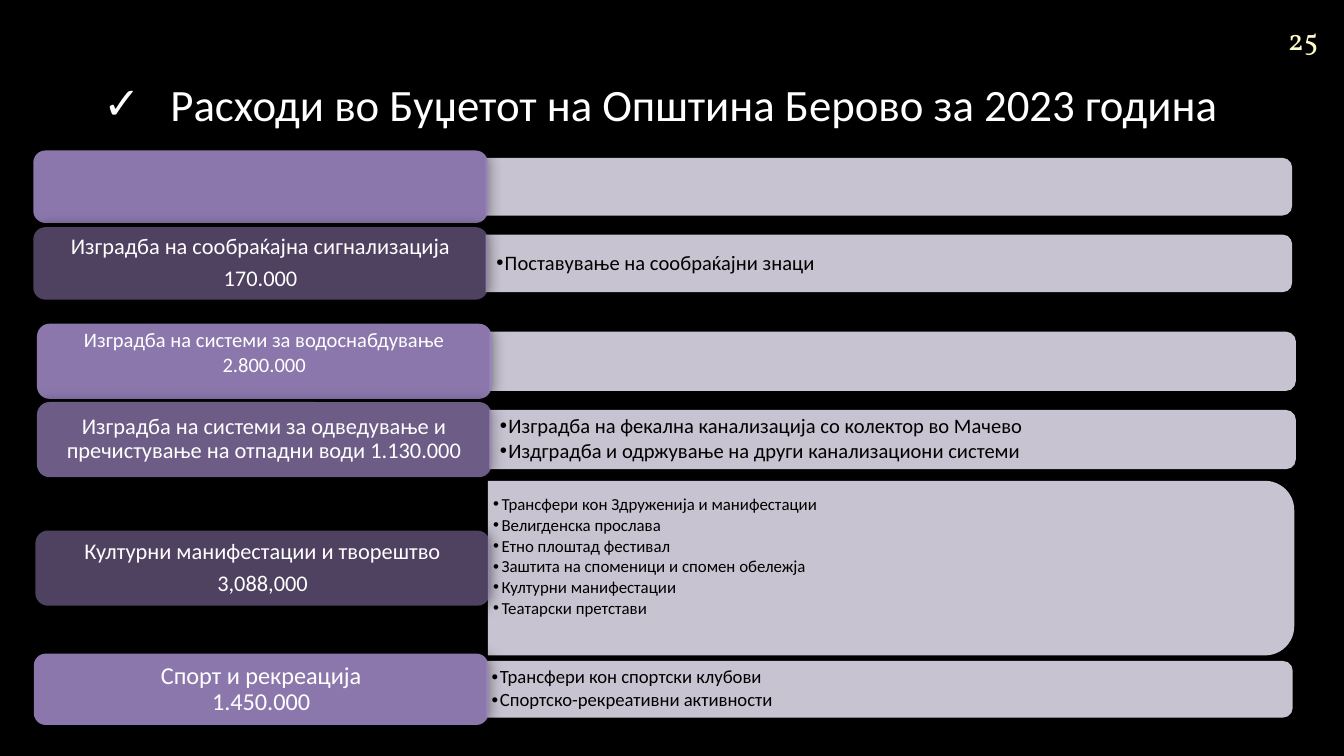
from lxml import etree
from pptx import Presentation
from pptx.dml.color import RGBColor
from pptx.enum import shapes, text
from pptx.oxml.ns import qn
from pptx.util import Cm, Pt

BLACK = RGBColor(0x00, 0x00, 0x00)
WHITE = RGBColor(0xFF, 0xFF, 0xFF)
CREAM = RGBColor(0xFE, 0xFA, 0xC9)
PURPLE = RGBColor(0x9C, 0x85, 0xC0)
LILAC = RGBColor(0xDE, 0xD9, 0xE8)

PANEL_WIDTH = 15.24
LABEL_WIDTH = 8.59
LABEL_OFFSET = 8.55  # a label starts this far left of its panel

# panel left, centre y, panel height, label height, label opacity %,
# label size, label lines, extra space under label,
# bullet size, bullet inset, bullets, extra space under bullets
ROWS = [
    (9.18, 3.53, 1.09, 1.37, 90, 12, [], 0, 11, 0.2, [], 0),
    (9.18, 4.98, 1.09, 1.37, 50, 12,
     ["Изградба на сообраќајна сигнализација", "170.000"], 0,
     11, 0.2, ["Поставување на сообраќајни знаци"], 0),
    (9.25, 6.83, 1.12, 1.42, 90, 11,
     ["Изградба на системи за водоснабдување 2.800.000"], 0.36, 11, 0.2, [], 0),
    (9.25, 8.31, 1.12, 1.42, 70, 12,
     ["Изградба на системи за одведување и пречистување на отпадни води 1.130.000"], 0,
     11, 0.2, ["Изградба на фекална канализација со колектор во Мачево",
               "Издградба и одржување на други канализациони системи"], 0),
    (9.22, 10.74, 3.3, 1.42, 50, 12,
     ["Културни манифестации и творештво", "3,088,000"], 0,
     9, 0.1, ["Трансфери кон Здруженија и манифестации", "Велигденска прослава",
              "Етно плоштад фестивал", "Заштита на споменици и спомен обележја",
              "Културни манифестации", "Театарски претстави"], 0.42),
    (9.19, 13.03, 1.07, 1.35, 90, 13,
     ["Спорт и рекреација", "1.450.000"], 0,
     10, 0.1, ["Трансфери кон спортски клубови", "Спортско-рекреативни активности"], 0),
]


def paint(shape, color, opacity):
    """Fill a shape with a see-through colour, without line or shadow."""
    shape.fill.solid()
    shape.fill.fore_color.rgb = color
    color_node = shape.fill._xPr.find(".//" + qn("a:srgbClr"))
    etree.SubElement(color_node, qn("a:alpha"), val=str(opacity * 1000))
    shape.line.fill.background()
    shape.shadow.inherit = False


def write(shape, lines, size, color, insets, anchor=text.MSO_ANCHOR.MIDDLE,
          align=text.PP_ALIGN.LEFT, font="Calibri", spacing=1.0, after=0,
          bullet=None, indent=0):
    """Write one paragraph per line, with a hanging bullet if asked for."""
    frame = shape.text_frame
    frame.word_wrap = True
    frame.auto_size = text.MSO_AUTO_SIZE.NONE
    frame.vertical_anchor = anchor
    (frame.margin_left, frame.margin_top,
     frame.margin_right, frame.margin_bottom) = [Cm(inset) for inset in insets]
    for number, line in enumerate(lines):
        paragraph = frame.add_paragraph() if number else frame.paragraphs[0]
        paragraph.alignment = align
        paragraph.line_spacing = spacing
        paragraph.space_after = Pt(after)
        run = paragraph.add_run()
        run.text = line
        run.font.size = Pt(size)
        run.font.name = font
        run.font.color.rgb = color
        if bullet:
            properties = paragraph._p.get_or_add_pPr()
            properties.set("marL", str(Cm(indent)))
            properties.set("indent", str(-Cm(indent)))
            bullet_color = etree.SubElement(properties, qn("a:buClr"))
            etree.SubElement(bullet_color, qn("a:srgbClr"), val=str(color))
            etree.SubElement(properties, qn("a:buFont"), typeface="Arial")
            etree.SubElement(properties, qn("a:buChar"), char=bullet)


presentation = Presentation()
presentation.slide_width = Cm(25.4)
presentation.slide_height = Cm(14.29)
slide = presentation.slides.add_slide(presentation.slide_layouts[5])
slide.background.fill.solid()
slide.background.fill.fore_color.rgb = BLACK

# Title
title = slide.shapes.title
title.left, title.top, title.width, title.height = Cm(1.7), Cm(0.74), Cm(23.27), Cm(1.98)
write(title, ["Расходи во Буџетот на Општина Берово за 2023 година"], 24, WHITE,
      [0.25] * 4, anchor=text.MSO_ANCHOR.BOTTOM, bullet="✓", indent=1.27)

# Page number
page_number = slide.shapes.add_textbox(Cm(23.85), Cm(-0.03), Cm(1.55), Cm(1.52))
write(page_number, ["25"], 16, CREAM, [0.25] * 4,
      align=text.PP_ALIGN.CENTER, font="Vollkorn")

# Expense rows
for (left, middle, height, label_height, opacity, label_size, label_lines, label_space,
     bullet_size, inset, bullets, bullet_space) in ROWS:
    # Panel, turned a quarter so that its round corners face right
    panel = slide.shapes.add_shape(
        shapes.MSO_SHAPE.ROUND_2_SAME_RECTANGLE,
        Cm(left + (PANEL_WIDTH - height) / 2), Cm(middle - PANEL_WIDTH / 2),
        Cm(height), Cm(PANEL_WIDTH))
    panel.rotation = 90
    paint(panel, LILAC, 90)

    # Bullets stand level on the panel
    if bullets:
        details = slide.shapes.add_textbox(
            Cm(left), Cm(middle - height / 2), Cm(PANEL_WIDTH), Cm(height))
        write(details, bullets, bullet_size, BLACK,
              [inset, 0.05, inset, 0.05 + bullet_space],
              spacing=0.9, after=bullet_size * 0.15, bullet="•", indent=0.16)

    # Label with a soft shadow
    label = slide.shapes.add_shape(
        shapes.MSO_SHAPE.ROUNDED_RECTANGLE, Cm(left - LABEL_OFFSET),
        Cm(middle - label_height / 2), Cm(LABEL_WIDTH), Cm(label_height))
    paint(label, PURPLE, opacity)
    effects = label._element.spPr.find(qn("a:effectLst"))
    shadow = etree.SubElement(effects, qn("a:outerShdw"), blurRad=str(Pt(7.5)),
                              dist="0", dir="0", rotWithShape="0")
    shadow_color = etree.SubElement(shadow, qn("a:srgbClr"), val=str(BLACK))
    etree.SubElement(shadow_color, qn("a:alpha"), val="50000")
    single = label_size != 12
    write(label, label_lines, label_size, WHITE, [0.13, 0.07, 0.13, 0.07 + label_space],
          align=text.PP_ALIGN.CENTER, spacing=1.0 if label_size == 11 else 0.9,
          after=0 if single else label_size * 0.35)

presentation.save("out.pptx")
